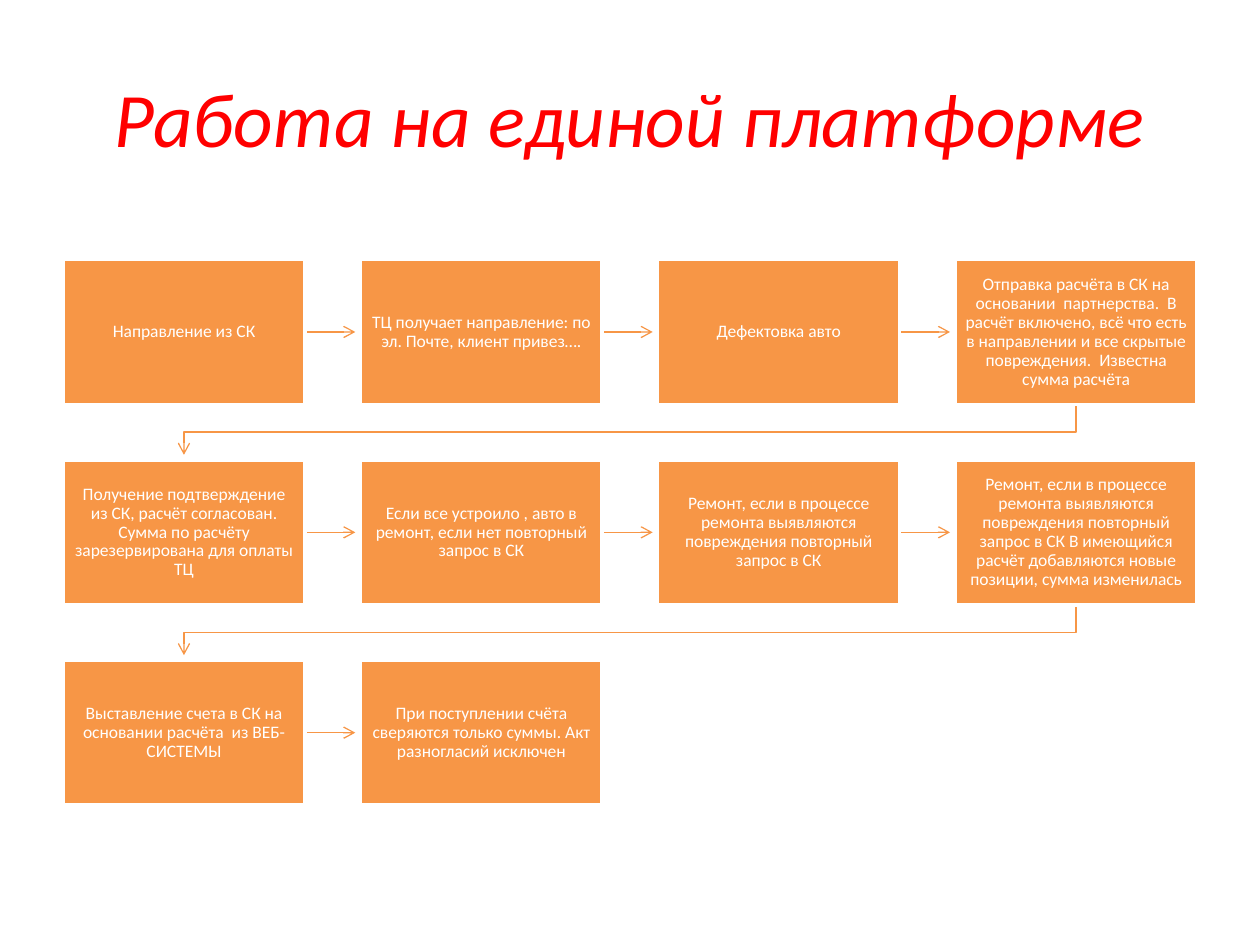
from pptx import Presentation
from pptx.dml.color import RGBColor
from pptx.enum.shapes import MSO_CONNECTOR as Conn, MSO_SHAPE as Shape
from pptx.enum.text import MSO_ANCHOR as Anchor, PP_ALIGN as Align
from pptx.oxml.ns import qn
from pptx.util import Inches, Pt
from lxml.etree import SubElement

ORANGE, WHITE, RED = "F79646", "FFFFFF", "FF0000"
LEFT, TOP = 0.5, 2.06
WIDE, HIGH = 1.92, 1.15
STEP_X, STEP_Y = 2.36, 1.59
COLS = 4
TIP = 0.04  # space between an arrow tip and the next box

steps = [
    "Направление из СК",
    "ТЦ получает направление: по эл. Почте, клиент привез….",
    "Дефектовка авто",
    "Отправка расчёта в СК на основании  партнерства.  В расчёт включено, "
    "всё что есть в направлении и все скрытые повреждения.  Известна сумма расчёта",
    "Получение подтверждение из СК, расчёт согласован. Сумма по расчёту "
    "зарезервирована для оплаты ТЦ",
    "Если все устроило , авто в ремонт, если нет повторный запрос в СК",
    "Ремонт, если в процессе ремонта выявляются повреждения повторный запрос в СК",
    "Ремонт, если в процессе ремонта выявляются повреждения повторный запрос в СК "
    "В имеющийся расчёт добавляются новые позиции, сумма изменилась",
    "Выставление счета в СК на основании расчёта  из ВЕБ-СИСТЕМЫ",
    "При поступлении счёта сверяются только суммы. Акт разногласий исключен",
]


def color(code):
    return RGBColor.from_string(code)


def style_arrow(arrow):
    arrow.line.color.rgb = color(ORANGE)
    arrow.line.width = Pt(0.75)
    props = arrow.element.spPr
    SubElement(props.find(qn("a:ln")), qn("a:tailEnd"), type="arrow")
    SubElement(props, qn("a:effectLst"))


deck = Presentation()
deck.slide_width, deck.slide_height = Inches(10), Inches(7.5)
slide = deck.slides.add_slide(deck.slide_layouts[5])
shapes = slide.shapes

# Title
title = shapes.title
title.left, title.top = Inches(0.5), Inches(0.3)
title.width, title.height = Inches(9), Inches(1.25)
title.text_frame.text = "Работа на единой платформе"
title.text_frame.vertical_anchor = Anchor.MIDDLE
para = title.text_frame.paragraphs[0]
para.alignment = Align.CENTER
para.font.name, para.font.size = "Calibri", Pt(44)
para.font.italic = True
para.font.color.rgb = color(RED)

for i, text in enumerate(steps):
    row, col = divmod(i, COLS)
    x, y = LEFT + col * STEP_X, TOP + row * STEP_Y

    # Arrow to the next step, bent at the end of a row
    if i < len(steps) - 1:
        if col < COLS - 1:
            mid = Inches(y + HIGH / 2)
            arrow = shapes.add_connector(
                Conn.STRAIGHT, Inches(x + WIDE), mid, Inches(x + STEP_X - TIP), mid)
        else:
            start, end = Inches(x + WIDE / 2), Inches(LEFT + WIDE / 2)
            bend = Inches(y + HIGH + 0.22)
            pen = shapes.build_freeform(start, Inches(y + HIGH))
            pen.add_line_segments(
                [(start, bend), (end, bend), (end, Inches(y + STEP_Y - TIP))],
                close=False)
            arrow = pen.convert_to_shape()
            arrow.fill.background()
        style_arrow(arrow)

    # Step box
    box = shapes.add_shape(
        Shape.RECTANGLE, Inches(x), Inches(y), Inches(WIDE), Inches(HIGH))
    box.shadow.inherit = False
    box.fill.solid()
    box.fill.fore_color.rgb = color(ORANGE)
    box.line.color.rgb = color(WHITE)
    box.line.width = Pt(2)
    frame = box.text_frame
    frame.word_wrap = True
    frame.vertical_anchor = Anchor.MIDDLE
    frame.margin_left = frame.margin_right = Inches(0.08)
    frame.margin_top = frame.margin_bottom = Inches(0.08)
    frame.text = text
    para = frame.paragraphs[0]
    para.alignment = Align.CENTER
    para.line_spacing = 0.9
    para.font.name, para.font.size = "Calibri", Pt(10)
    para.font.color.rgb = color(WHITE)

deck.save("out.pptx")
